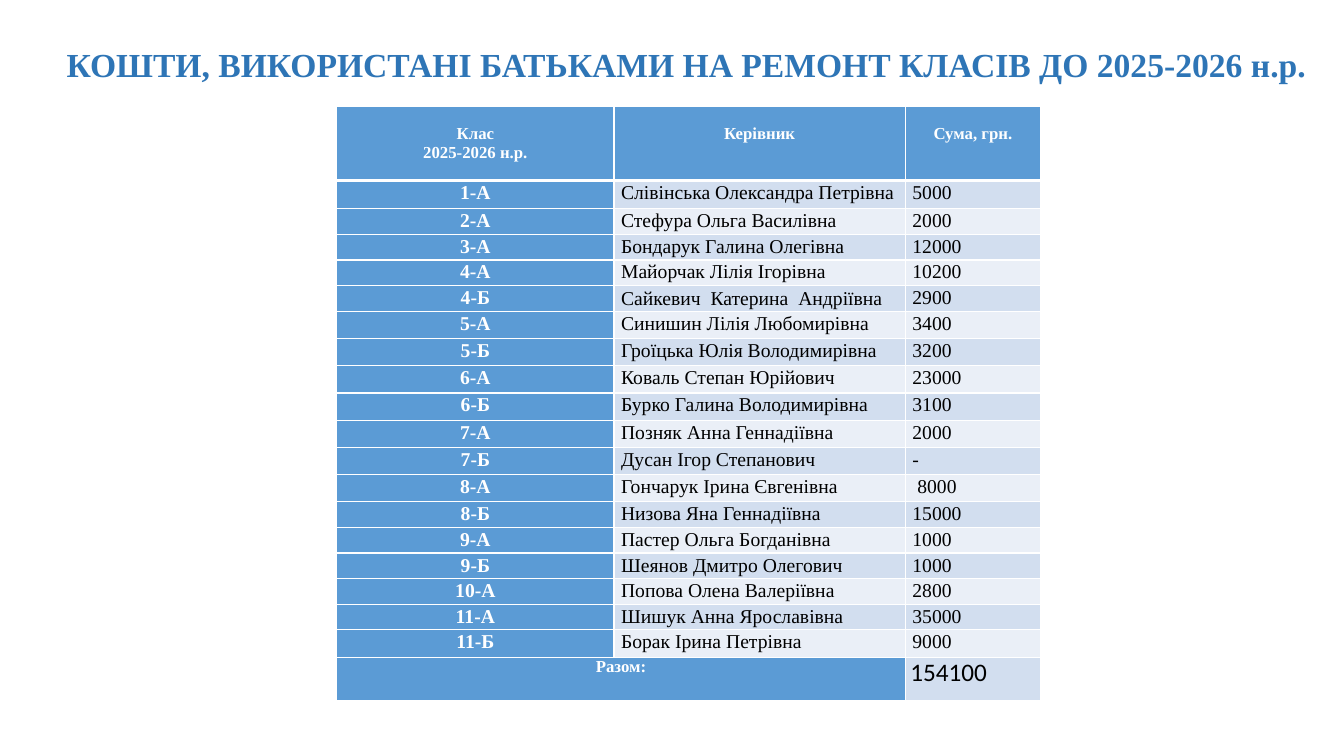
from lxml.etree import SubElement
from pptx import Presentation
from pptx.dml.color import RGBColor
from pptx.enum.text import MSO_ANCHOR as ANCHOR, MSO_AUTO_SIZE as AUTO, PP_ALIGN as ALIGN
from pptx.oxml.ns import qn
from pptx.util import Inches, Pt

TITLE = "КОШТИ, ВИКОРИСТАНІ БАТЬКАМИ НА РЕМОНТ КЛАСІВ ДО 2025-2026 н.р."
HEADERS = ("Клас\n2025-2026 н.р.", "Керівник", "Сума, грн.")
CLASSES = [
    ("1-А", "Слівінська Олександра Петрівна", "5000", 0.28),
    ("2-А", "Стефура Ольга Василівна", "2000", 0.26),
    ("3-А", "Бондарук Галина Олегівна", "12000", 0.25),
    ("4-А", "Майорчак Лілія Ігорівна", "10200", 0.25),
    ("4-Б", "Сайкевич  Катерина  Андріївна", "2900", 0.26),
    ("5-А", "Синишин Лілія Любомирівна", "3400", 0.27),
    ("5-Б", "Гроїцька Юлія Володимирівна", "3200", 0.27),
    ("6-А", "Коваль Степан Юрійович", "23000", 0.27),
    ("6-Б", "Бурко Галина Володимирівна", "3100", 0.27),
    ("7-А", "Позняк Анна Геннадіївна", "2000", 0.27),
    ("7-Б", "Дусан Ігор Степанович", "-", 0.27),
    ("8-А", "Гончарук Ірина Євгенівна", " 8000", 0.27),
    ("8-Б", "Низова Яна Геннадіївна", "15000", 0.26),
    ("9-А", "Пастер Ольга Богданівна", "1000", 0.25),
    ("9-Б", "Шеянов Дмитро Олегович", "1000", 0.25),
    ("10-А", "Попова Олена Валеріївна", "2800", 0.26),
    ("11-А", "Шишук Анна Ярославівна", "35000", 0.25),
    ("11-Б", "Борак Ірина Петрівна", "9000", 0.28),
]
TOTAL = ("Разом:", "154100")
COL_WIDTHS = (2.75, 2.89, 1.34)
HEADER_HEIGHT, TOTAL_HEIGHT = 0.73, 0.42
HEADER_TOP = 0.18

SERIF, SANS = "Times New Roman", "Calibri"
WHITE = RGBColor(0xFF, 0xFF, 0xFF)
BLACK = RGBColor(0x00, 0x00, 0x00)
TITLE_BLUE = RGBColor(0x2E, 0x75, 0xB6)
BLUE = RGBColor(0x5B, 0x9B, 0xD5)
BANDS = (RGBColor(0xEA, 0xEF, 0xF7), RGBColor(0xD2, 0xDE, 0xEF))


def set_font(p, size, color, bold, name=SERIF):
    for r in p.runs:
        r.font.size, r.font.name, r.font.bold = Pt(size), name, bold
        r.font.color.rgb = color


def set_borders(cell, top=1, bottom=1):
    tc_pr = cell._tc.get_or_add_tcPr()
    for side, width in (("L", 1), ("R", 1), ("T", top), ("B", bottom)):
        ln = SubElement(tc_pr, qn(f"a:ln{side}"), w=str(Pt(width)))
        fill = SubElement(ln, qn("a:solidFill"))
        SubElement(fill, qn("a:srgbClr"), val=str(WHITE))


def fill_cell(cell, text, fill, size, margin, top=0, spacing=None, name=SERIF):
    cell.fill.solid()
    cell.fill.fore_color.rgb = fill
    cell.margin_left = cell.margin_right = Inches(margin)
    cell.margin_top, cell.margin_bottom = Inches(top), 0
    cell.text_frame.text = text
    label = fill == BLUE
    for p in cell.text_frame.paragraphs:
        p.alignment = ALIGN.CENTER if label else ALIGN.LEFT
        if spacing:
            p.line_spacing = spacing
        set_font(p, size, WHITE if label else BLACK, label, name)


prs = Presentation()
prs.slide_width, prs.slide_height = Inches(13.33), Inches(7.5)
s = prs.slides.add_slide(prs.slide_layouts[5])

title = s.shapes.title
title.left, title.top = Inches(0.56), Inches(0.36)
title.width, title.height = Inches(12.62), Inches(0.55)
tf = title.text_frame
tf.text = TITLE
tf.auto_size, tf.word_wrap, tf.vertical_anchor = AUTO.NONE, True, ANCHOR.MIDDLE
tf.paragraphs[0].alignment = ALIGN.LEFT
set_font(tf.paragraphs[0], 24, TITLE_BLUE, True)

heights = [HEADER_HEIGHT, *(row[-1] for row in CLASSES), TOTAL_HEIGHT]
last = len(heights) - 1
table = s.shapes.add_table(len(heights), len(COL_WIDTHS), Inches(3.34), Inches(1.06),
                           Inches(sum(COL_WIDTHS)), Inches(sum(heights))).table
for col, width in zip(table.columns, COL_WIDTHS):
    col.width = Inches(width)
for i, (row, height) in enumerate(zip(table.rows, heights)):
    row.height = Inches(height)
    for cell in row.cells:
        set_borders(cell, top=3 if i == 1 else 1, bottom=3 if i == 0 else 1)

for j, text in enumerate(HEADERS):
    fill_cell(table.cell(0, j), text, BLUE, 12, 0.05, top=HEADER_TOP)
for i, (*texts, _) in enumerate(CLASSES, 1):
    for j, text in enumerate(texts):
        fill_cell(table.cell(i, j), text, BANDS[i % 2] if j else BLUE, 14, 0.07, spacing=1.07)
        if text.startswith("Сайкевич"):
            table.cell(i, j).vertical_anchor = ANCHOR.MIDDLE

table.cell(last, 0).merge(table.cell(last, 1))
fill_cell(table.cell(last, 0), TOTAL[0], BLUE, 12, 0.05)
fill_cell(table.cell(last, 2), TOTAL[1], BANDS[1], 18, 0.05, name=SANS)

prs.save("out.pptx")
